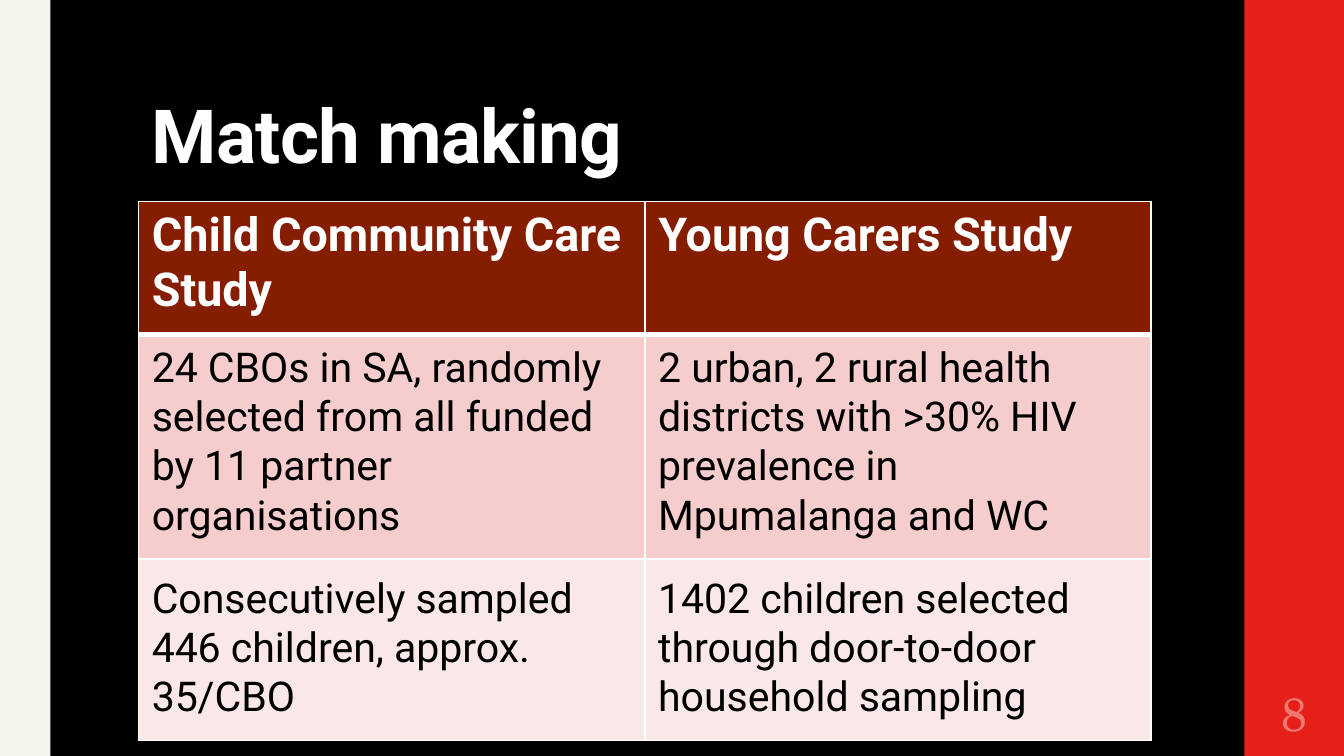
from lxml import etree
from pptx import Presentation
from pptx.dml.color import RGBColor
from pptx.enum import shapes, text
from pptx.oxml import ns
from pptx.util import Pt

COLORS = {
    "black": "000000", "white": "FFFFFF", "red": "E52018", "cream": "F5F4ED",
    "header": "851D00", "rose": "F5CDCC", "blush": "FAE8E8", "number": "F07873",
}
HEADERS = ["Child Community Care Study", "Young Carers Study"]
# Each entry: top, height, texts from left to right
BODY_TEXTS = [
    (179.3, 113.8, [
        "24 CBOs in SA, randomly selected from all funded by 11 partner organisations",
        "2 urban, 2 rural health districts with >30% HIV prevalence in Mpumalanga and WC",
    ]),
    (303.1, 87.1, [
        "Consecutively sampled 446 children, approx. 35/CBO",
        "1402 children selected through door-to-door household sampling",
    ]),
]
ROW_HEIGHTS = [71.3, 120.2, 97.2]
ROW_FILLS = ["header", "rose", "blush"]


def paint(fill, color):
    fill.solid()
    fill.fore_color.rgb = RGBColor.from_string(COLORS[color])


def style(para, size, color, bold=False, name="Roboto"):
    para.font.size = Pt(size)
    para.font.name = name
    para.font.bold = bold
    para.font.color.rgb = RGBColor.from_string(COLORS[color])


def set_margins(frame, left, top, right, bottom):
    frame.margin_left, frame.margin_top = Pt(left), Pt(top)
    frame.margin_right, frame.margin_bottom = Pt(right), Pt(bottom)


def add_text(page, box, words):
    frame = page.shapes.add_textbox(*map(Pt, box)).text_frame
    frame.word_wrap = True
    frame.text = words
    return frame


def add_band(page, box, color):
    band = page.shapes.add_shape(shapes.MSO_SHAPE.RECTANGLE, *map(Pt, box))
    band.shadow.inherit = False
    paint(band.fill, color)
    band.line.fill.background()


def add_title(page, box, words):
    title = page.shapes.title
    title.left, title.top, title.width, title.height = map(Pt, box)
    frame = title.text_frame
    frame.text = words
    frame.word_wrap = True
    frame.auto_size = text.MSO_AUTO_SIZE.NONE
    frame.vertical_anchor = text.MSO_ANCHOR.BOTTOM
    set_margins(frame, 7.2, 2.2, 7.2, 3.6)
    para = frame.paragraphs[0]
    para.alignment = text.PP_ALIGN.LEFT
    para.line_spacing = 0.9
    style(para, 40, "white", bold=True)
    para.runs[0].font._element.set("spc", "-40")


def set_borders(cell, widths):
    """Draw white cell borders; widths maps L, R, T, B to points."""
    properties = cell._tc.get_or_add_tcPr()
    for index, (side, width) in enumerate(widths.items()):
        line = etree.Element(ns.qn(f"a:ln{side}"), w=str(Pt(width)))
        fill = etree.SubElement(line, ns.qn("a:solidFill"))
        etree.SubElement(fill, ns.qn("a:srgbClr"), val=COLORS["white"])
        properties.insert(index, line)


def add_comparison(page, box):
    left, top, width, height = box
    column_width = width / len(HEADERS)
    table = page.shapes.add_table(
        len(ROW_HEIGHTS), len(HEADERS), *map(Pt, box)).table

    # Grid
    for index, (row_height, color) in enumerate(zip(ROW_HEIGHTS, ROW_FILLS)):
        row = table.rows[index]
        row.height = Pt(row_height)
        for cell in row.cells:
            paint(cell.fill, color)
            set_borders(cell, {"L": 1, "R": 1, "T": 3 if index == 1 else 1,
                               "B": 3 if index == 0 else 1})

    # Header texts
    for cell, header in zip(table.rows[0].cells, HEADERS):
        cell.text = header
        style(cell.text_frame.paragraphs[0], 25, "white", bold=True)

    # Texts laid over the body rows
    for text_top, text_height, words in BODY_TEXTS:
        for column, entry in enumerate(words):
            text_box = (left + column * column_width, text_top,
                        column_width, text_height)
            style(add_text(page, text_box, entry).paragraphs[0], 22, "black")


def add_page_number(page, box, number):
    frame = add_text(page, box, number)
    frame.vertical_anchor = text.MSO_ANCHOR.MIDDLE
    set_margins(frame, 3.6, 3.6, 3.6, 3.6)
    para = frame.paragraphs[0]
    para.alignment = text.PP_ALIGN.CENTER
    style(para, 25, "number", name="TeX Gyre Schola")


def main():
    deck = Presentation()
    deck.slide_width, deck.slide_height = Pt(720), Pt(405)
    page = deck.slides.add_slide(deck.slide_layouts[5])
    paint(page.background.fill, "black")

    # Side bands
    add_band(page, (666.7, 0, 53.3, 405), "red")
    add_band(page, (0, 0, 27, 405), "cream")

    # Content
    add_title(page, (74.2, 17.3, 572.4, 82.8), "Match making")
    add_comparison(page, (74.2, 108, 542.6, sum(ROW_HEIGHTS)))
    add_page_number(page, (666.7, 364.3, 53.3, 35.3), "8")
    deck.save("out.pptx")


if __name__ == "__main__":
    main()
